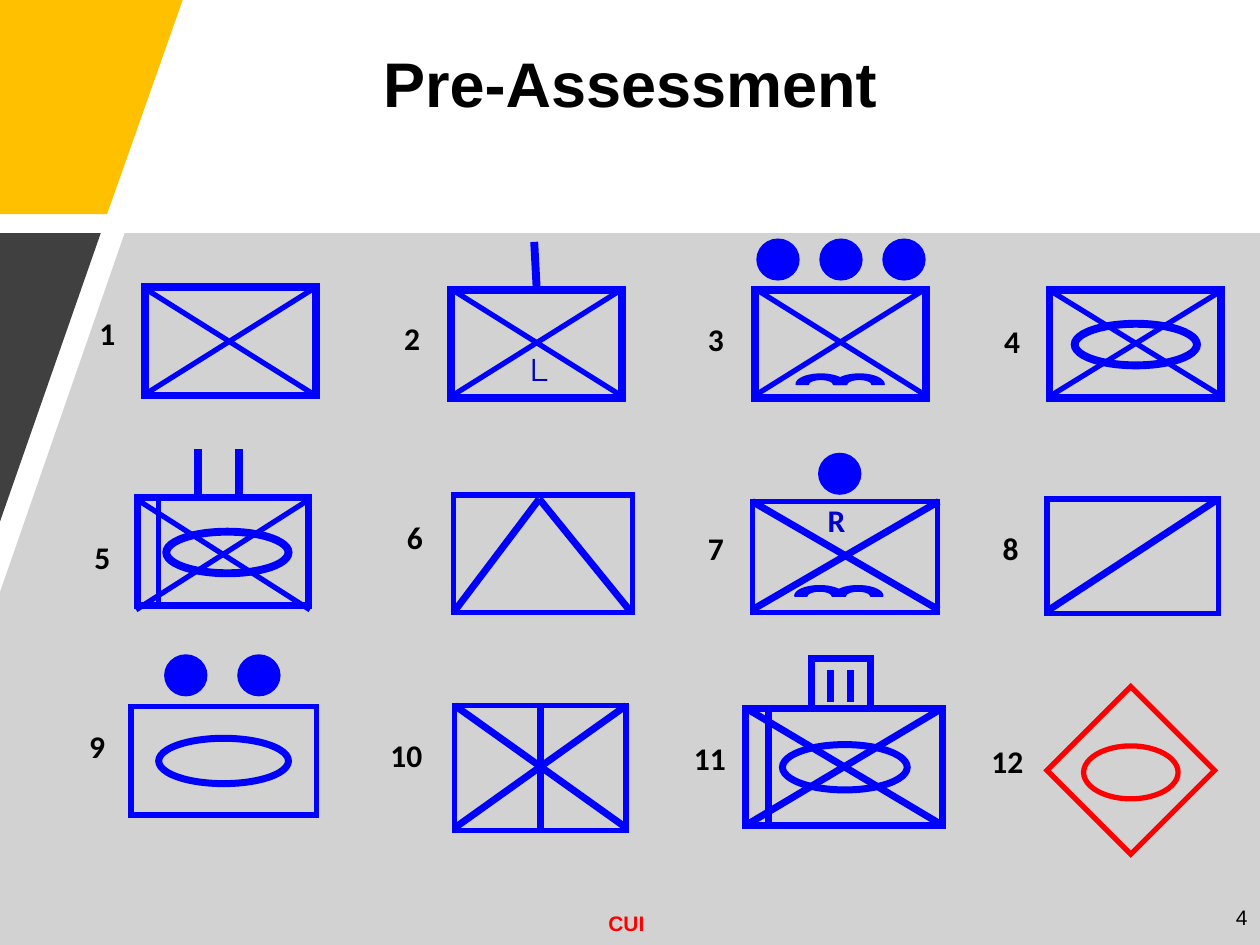
from math import cos, pi, sin

from lxml.etree import SubElement
from pptx import Presentation
from pptx.dml.color import RGBColor
from pptx.enum.shapes import MSO_CONNECTOR, MSO_SHAPE
from pptx.enum.text import MSO_ANCHOR, MSO_AUTO_SIZE, PP_ALIGN
from pptx.oxml.ns import qn
from pptx.util import Cm, Pt

BLUE = RGBColor(0x00, 0x00, 0xFF)
DARK_BLUE = RGBColor(0x00, 0x00, 0xCC)
RED = RGBColor(0xFF, 0x00, 0x00)
BLACK = RGBColor(0x00, 0x00, 0x00)
AMBER = RGBColor(0xFF, 0xC0, 0x00)
GREY = RGBColor(0xA6, 0xA6, 0xA6)
CHARCOAL = RGBColor(0x40, 0x40, 0x40)

DOT_WIDTH, DOT_HEIGHT = 0.33, 0.32
WING_STEP = 0.305


def length(inches):
    return Cm(inches * 2.54)


class SymbolPage:
    """Draws on one slide; every position and size is in inches."""

    def __init__(self, page):
        self.page = page
        self.shapes = page.shapes

    def start_symbol(self, number, left, top, width=0.39):
        """Open a new group, beginning with its number label."""
        self.shapes = self.page.shapes.add_group_shape().shapes
        self.text(str(number), left, top, width, 0.5)

    def text(self, words, left, top, width, height, size=18, font="Calibri",
             color=BLACK, bold=True, wrap=False, anchor=MSO_ANCHOR.TOP,
             align=PP_ALIGN.LEFT, spacing=None):
        box = self.shapes.add_textbox(*map(length, (left, top, width, height)))
        frame = box.text_frame
        frame.text = words
        frame.word_wrap = wrap
        frame.auto_size = MSO_AUTO_SIZE.NONE if wrap else MSO_AUTO_SIZE.SHAPE_TO_FIT_TEXT
        frame.vertical_anchor = anchor
        para = frame.paragraphs[0]
        para.alignment = align
        if spacing:
            para.line_spacing = spacing
        span = para.runs[0].font
        span.name, span.size, span.bold = font, Pt(size), bold
        span.color.rgb = color

    def outline(self, kind, left, top, width, height, weight, color=BLUE):
        shape = self.shapes.add_shape(kind, *map(length, (left, top, width, height)))
        shape.shadow.inherit = False
        shape.fill.background()
        shape.line.color.rgb = color
        shape.line.width = Pt(weight)
        SubElement(shape.line._get_or_add_ln(), qn("a:miter"), lim="800000")
        return shape

    def frame(self, left, top, width, height, weight):
        return self.outline(MSO_SHAPE.RECTANGLE, left, top, width, height, weight)

    def oval(self, left, top, width, height, weight, color=BLUE):
        return self.outline(MSO_SHAPE.OVAL, left, top, width, height, weight, color)

    def dots(self, top, *lefts):
        for left in lefts:
            dot = self.oval(left, top, DOT_WIDTH, DOT_HEIGHT, 1)
            dot.fill.solid()
            dot.fill.fore_color.rgb = BLUE

    def line(self, x1, y1, x2, y2, weight):
        connector = self.shapes.add_connector(
            MSO_CONNECTOR.STRAIGHT, *map(length, (x1, y1, x2, y2)))
        connector.line.color.rgb = BLUE
        connector.line.width = Pt(weight)
        SubElement(connector._element.spPr, qn("a:effectLst"))
        return connector

    def cross(self, left, top, right, bottom, weight):
        self.line(left, top, right, bottom, weight)
        self.line(left, bottom, right, top, weight)

    def bars(self, top, bottom, weight, *positions):
        for x in positions:
            self.line(x, bottom, x, top, weight)

    def area(self, points, color, opacity=None):
        corners = [(length(x), length(y)) for x, y in points]
        builder = self.shapes.build_freeform(*corners[0])
        builder.add_line_segments(corners[1:], close=True)
        shape = builder.convert_to_shape()
        shape.shadow.inherit = False
        shape.fill.solid()
        shape.fill.fore_color.rgb = color
        shape.line.fill.background()
        if opacity:
            tint = shape.fill._xPr.find(qn("a:solidFill"))[0]
            SubElement(tint, qn("a:alpha"), val=str(opacity * 1000))
        return shape

    def wings(self, left, top):
        """Two half rings side by side, the airborne mark."""
        steps = [pi * step / 20 for step in range(21)]
        for wing_left in (left, left + WING_STEP):
            x, y = wing_left + 0.195, top + 0.08
            outer = [(x - 0.195 * cos(a), y - 0.08 * sin(a)) for a in steps]
            inner = [(x + 0.1 * cos(a), y - 0.04 * sin(a)) for a in steps]
            wing = self.area(outer + inner, BLUE)
            wing.line.color.rgb = BLUE
            wing.line.width = Pt(1)


def draw_background(page):
    page.area([(0, 0), (1.45, 0), (0.85, 1.7), (0, 1.7)], AMBER)
    page.area([(0.99, 1.85), (10, 1.85), (10, 7.5), (0, 7.5), (0, 4.7)], GREY, 50)
    page.area([(0, 1.85), (0.8, 1.85), (0, 4.14)], CHARCOAL)
    page.text("CUI", 4.73, 7.18, 0.49, 0.3, 12, "Arial", RED)
    page.text("Pre-Assessment", 0, 0.39, 10, 0.61, 36, "Arial", wrap=True,
              anchor=MSO_ANCHOR.BOTTOM, align=PP_ALIGN.CENTER, spacing=0.8)
    page.text("4", 7.75, 7.08, 2.25, 0.4, 12, "Arial", bold=False, wrap=True,
              anchor=MSO_ANCHOR.MIDDLE, align=PP_ALIGN.RIGHT)


def draw_top_row(page):
    page.start_symbol(1, 0.69, 2.44)
    page.cross(1.15, 2.29, 2.49, 3.13, 3)
    page.frame(1.15, 2.28, 1.36, 0.86, 4.5)

    page.start_symbol(2, 3.11, 2.48)
    page.cross(3.59, 2.3, 4.93, 3.14, 3)
    page.text("L", 4.1, 2.73, 0.42, 0.5, font="Montserrat", color=DARK_BLUE, bold=False)
    company = page.frame(3.58, 2.3, 1.36, 0.86, 4.5)
    page.line(4.24, 2.3, 4.24, 1.92, 4.5).begin_connect(company, 0)

    page.start_symbol(3, 5.52, 2.49)
    page.wings(6.32, 2.97)
    page.frame(5.99, 2.3, 1.36, 0.86, 4.5)
    page.cross(5.99, 2.29, 7.35, 3.14, 3)
    page.dots(1.9, 6.01, 6.51, 7.01)

    page.start_symbol(4, 7.87, 2.51)
    page.cross(8.34, 2.31, 9.69, 3.14, 3)
    page.oval(8.53, 2.57, 0.97, 0.33, 4.5)
    page.frame(8.33, 2.3, 1.36, 0.86, 4.5)


def draw_middle_row(page):
    page.start_symbol(5, 0.65, 4.22)
    page.frame(1.09, 3.95, 1.36, 0.86, 4)
    page.bars(3.95, 4.82, 3, 1.26)
    page.cross(1.08, 3.96, 2.46, 4.84, 3)
    page.oval(1.32, 4.22, 0.97, 0.33, 4.5)
    page.bars(3.56, 3.95, 4.5, 1.57, 1.9)

    page.start_symbol(6, 3.13, 4.06)
    for foot in (3.6, 5.01):
        page.line(4.28, 3.96, foot, 4.86, 4)
    page.frame(3.6, 3.93, 1.42, 0.93, 3)

    page.start_symbol(7, 5.52, 4.15)
    page.cross(5.97, 3.98, 7.45, 4.84, 4)
    page.frame(5.97, 3.98, 1.47, 0.88, 3)
    page.wings(6.31, 4.65)
    page.text("R", 6.47, 3.93, 0.44, 0.5, color=DARK_BLUE)
    page.dots(3.6, 6.5)

    page.start_symbol(8, 7.86, 4.15)
    page.line(8.31, 4.85, 9.67, 3.96, 4)
    page.frame(8.31, 3.96, 1.36, 0.91, 3)


def draw_bottom_row(page):
    page.start_symbol(9, 0.61, 5.72)
    page.oval(1.26, 5.86, 1.03, 0.36, 4)
    page.frame(1.04, 5.61, 1.47, 0.86, 3)
    page.dots(5.2, 1.31, 1.89)

    page.start_symbol(10, 3, 5.79, 0.58)
    page.cross(3.61, 5.6, 4.97, 6.57, 4)
    divided = page.frame(3.61, 5.6, 1.36, 0.99, 3)
    divider = page.line(4.29, 5.6, 4.29, 6.59, 4.5)
    divider.begin_connect(divided, 0)
    divider.end_connect(divided, 2)

    page.start_symbol(11, 5.41, 5.82, 0.56)
    page.frame(5.92, 5.62, 1.56, 0.93, 4)
    page.bars(5.32, 5.57, 4, 6.59, 6.75)
    page.bars(5.2, 5.62, 4, 6.44, 6.91)
    page.line(6.45, 5.23, 6.9, 5.23, 4)
    page.oval(6.21, 5.91, 0.99, 0.36, 4)
    page.cross(5.92, 5.62, 7.48, 6.55, 4)
    page.bars(5.62, 6.56, 4, 6.1)

    page.start_symbol(12, 7.77, 5.84, 0.58)
    page.outline(MSO_SHAPE.FLOWCHART_DECISION, 8.31, 5.45, 1.33, 1.33, 3, RED)
    page.oval(8.6, 5.92, 0.75, 0.42, 3, RED)


def main():
    deck = Presentation()
    deck.slide_width, deck.slide_height = length(10), length(7.5)
    page = SymbolPage(deck.slides.add_slide(deck.slide_layouts[6]))
    draw_background(page)
    draw_top_row(page)
    draw_middle_row(page)
    draw_bottom_row(page)
    deck.save("out.pptx")


if __name__ == "__main__":
    main()
